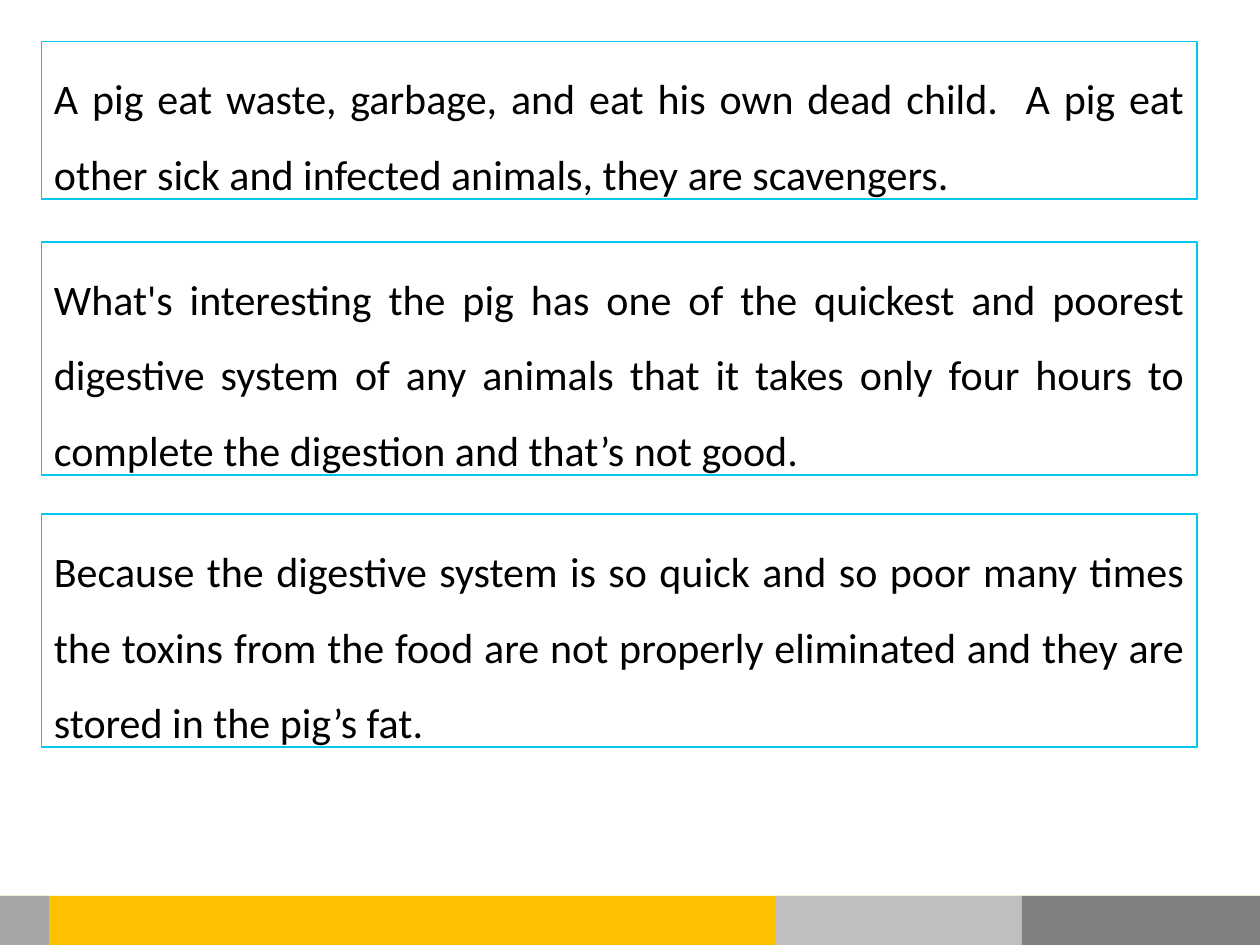
from dataclasses import dataclass

from pptx import Presentation
from pptx.dml.color import RGBColor
from pptx.enum.shapes import MSO_SHAPE
from pptx.enum.text import MSO_ANCHOR, MSO_AUTO_SIZE, PP_ALIGN
from pptx.util import Inches, Pt


@dataclass(frozen=True)
class Theme:
    """Colours, font and sizes used on the slide."""
    font: str = "Calibri"
    body_size: float = 24
    line_spacing: float = 1.5
    border_width: float = 0.75
    text: str = "000000"
    border: str = "03C6ED"
    amber: str = "FFC000"
    light_grey: str = "BFBFBF"
    mid_grey: str = "A6A6A6"
    dark_grey: str = "808080"


THEME = Theme()
SLIDE_WIDTH, SLIDE_HEIGHT = 10, 7.5
FOOTER_HEIGHT = 0.39
STATEMENTS = [
    (0.33, 1.25, "A pig eat waste, garbage, and eat his own dead child.  A pig eat "
     "other sick and infected animals, they are scavengers. "),
    (1.92, 1.85, "What's interesting the pig has one of the quickest and poorest "
     "digestive system of any animals that it takes only four hours to "
     "complete the digestion and that’s not good. "),
    (4.08, 1.85, "Because the digestive system is so quick and so poor many times "
     "the toxins from the food are not properly eliminated and they are "
     "stored in the pig’s fat. "),
]


def add_rectangle(slide, left, top, width, height):
    """Add a rectangle without shadow, fill or line."""
    shape = slide.shapes.add_shape(
        MSO_SHAPE.RECTANGLE, Inches(left), Inches(top), Inches(width), Inches(height))
    shape.shadow.inherit = False
    shape.fill.background()
    shape.line.fill.background()
    return shape


def add_statement(slide, left, top, width, height, text):
    """Add an outlined box holding one justified paragraph."""
    shape = add_rectangle(slide, left, top, width, height)
    shape.line.color.rgb = RGBColor.from_string(THEME.border)
    shape.line.width = Pt(THEME.border_width)
    frame = shape.text_frame
    frame.word_wrap = True
    frame.auto_size = MSO_AUTO_SIZE.SHAPE_TO_FIT_TEXT
    frame.vertical_anchor = MSO_ANCHOR.TOP
    paragraph = frame.paragraphs[0]
    paragraph.alignment = PP_ALIGN.JUSTIFY
    paragraph.line_spacing = THEME.line_spacing
    run = paragraph.add_run()
    run.text = text
    run.font.name = THEME.font
    run.font.size = Pt(THEME.body_size)
    run.font.color.rgb = RGBColor.from_string(THEME.text)


def add_footer(slide, left, top, width, height):
    """Add the amber band with its grey blocks."""
    bands = [
        (0, width, THEME.amber),
        (6.16, 1.97, THEME.light_grey),
        (8.11, width - 8.11, THEME.dark_grey),
        (0, height, THEME.mid_grey),
    ]
    for offset, band_width, color in bands:
        band = add_rectangle(slide, left + offset, top, band_width, height)
        band.fill.solid()
        band.fill.fore_color.rgb = RGBColor.from_string(color)


def main():
    """Build and save the slide."""
    presentation = Presentation()
    presentation.slide_width = Inches(SLIDE_WIDTH)
    presentation.slide_height = Inches(SLIDE_HEIGHT)
    slide = presentation.slides.add_slide(presentation.slide_layouts[6])
    for top, height, text in STATEMENTS:
        add_statement(slide, 0.33, top, 9.17, height, text)
    add_footer(slide, 0, SLIDE_HEIGHT - FOOTER_HEIGHT, SLIDE_WIDTH, FOOTER_HEIGHT)
    presentation.save("out.pptx")


if __name__ == "__main__":
    main()
